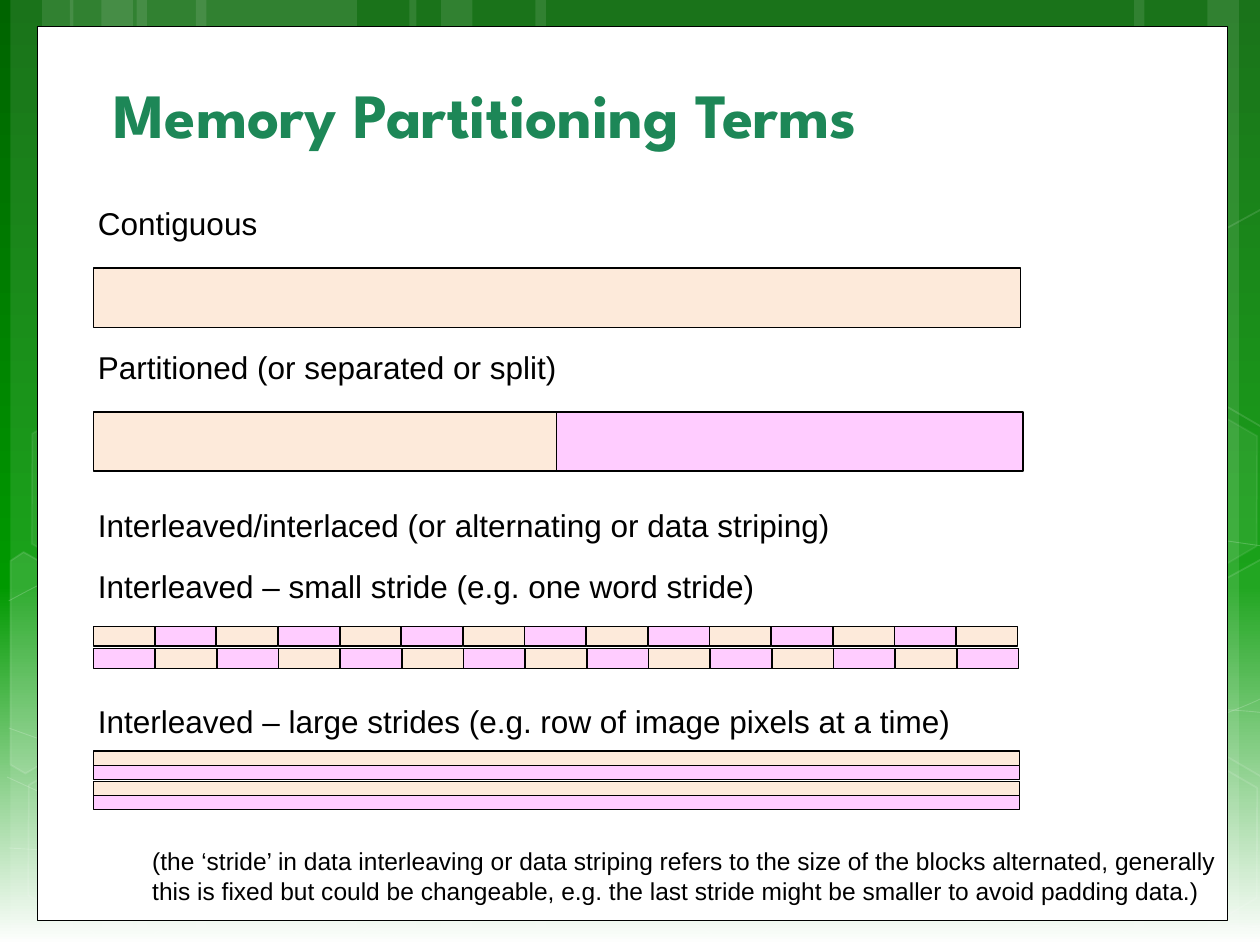
"""Build a slide of memory partitioning terms with bars that show each layout."""
from copy import deepcopy
from dataclasses import dataclass
from typing import Optional

from lxml import etree
from pptx import Presentation
from pptx import util as u
from pptx.dml import color
from pptx.enum import shapes, text
from pptx.oxml import ns

COLORS = {
    "white": "FFFFFF", "black": "000000", "title": "1D8757",
    "peach": "FDEADA", "pink": "FFCCFF",
    "dark_green": "006400", "green": "009900",
}
PAIR = ("peach", "pink")
LEFT, LABEL_LEFT = 53.3, 48.9
CELLS, PITCH = 15, 35.23


@dataclass
class Box:
    left: float
    top: float
    width: float
    height: float


@dataclass
class Style:
    fill: Optional[str] = None
    fill_alpha: int = 100
    line: Optional[str] = None
    line_width: float = 0.75
    line_alpha: int = 100


@dataclass
class Label:
    box: Box
    lines: tuple
    size: float = 18
    font: str = "Arial"
    color: str = "black"
    bold: bool = False
    anchor: text.MSO_ANCHOR = text.MSO_ANCHOR.TOP
    wrap: bool = False


@dataclass
class Hexagon:
    left: float
    top: float
    fill_alpha: int
    line_alpha: int


@dataclass
class Outline:
    points: tuple
    fill_alpha: int
    dy: float = 0


def rgb(name: str) -> color.RGBColor:
    """Return the named colour."""
    return color.RGBColor.from_string(COLORS[name])


def paint(fill, name: Optional[str], alpha: int) -> None:
    """Fill with a colour at an opacity in percent, or with nothing."""
    if name is None or alpha == 0:
        fill.background()
        return
    fill.solid()
    fill.fore_color.rgb = rgb(name)
    if alpha < 100:
        clr = fill._xPr.find(".//" + ns.qn("a:srgbClr"))
        etree.SubElement(clr, ns.qn("a:alpha"), val=str(alpha * 1000))


def apply_style(sp, style: Style) -> None:
    """Set the fill and line of a shape and remove its shadow."""
    sp.shadow.inherit = False
    paint(sp.fill, style.fill, style.fill_alpha)
    paint(sp.line.fill, style.line, style.line_alpha)
    if style.line:
        sp.line.width = u.Pt(style.line_width)


def add_preset(slide, kind, box: Box, style: Style):
    """Add a styled preset shape."""
    sp = slide.shapes.add_shape(kind, u.Pt(box.left), u.Pt(box.top),
                                u.Pt(box.width), u.Pt(box.height))
    apply_style(sp, style)
    return sp


def add_bar(slide, box: Box, fill: str, line: Optional[str] = "black",
            alpha: int = 100, line_width: float = 0.75) -> None:
    """Add a rectangle."""
    add_preset(slide, shapes.MSO_SHAPE.RECTANGLE, box,
               Style(fill, alpha, line, line_width))


def add_path(slide, points, style: Style, close: bool):
    """Add a freeform through the given points."""
    pts = [(u.Pt(x), u.Pt(y)) for x, y in points]
    fb = slide.shapes.build_freeform(*pts[0], scale=1.0)
    fb.add_line_segments(pts[1:], close=close)
    sp = fb.convert_to_shape()
    apply_style(sp, style)
    return sp


def add_curve(slide, knots, style: Style) -> None:
    """Add an open chain of cubic Bezier segments."""
    sp = add_path(slide, knots, style, False)
    lines = list(sp._element.iter(ns.qn("a:lnTo")))
    for i in range(0, len(lines), 3):
        curve = etree.Element(ns.qn("a:cubicBezTo"))
        lines[i].addprevious(curve)
        for line in lines[i:i + 3]:
            curve.append(line[0])
            line.getparent().remove(line)


def add_label(slide, label: Label) -> None:
    """Add a text box with one paragraph per line."""
    b = label.box
    tb = slide.shapes.add_textbox(u.Pt(b.left), u.Pt(b.top), u.Pt(b.width), u.Pt(b.height))
    tf = tb.text_frame
    tf.word_wrap = label.wrap
    tf.auto_size = text.MSO_AUTO_SIZE.NONE if label.wrap else text.MSO_AUTO_SIZE.SHAPE_TO_FIT_TEXT
    tf.vertical_anchor = label.anchor
    tf.text = "\n".join(label.lines)
    for p in tf.paragraphs:
        p.font.name, p.font.size, p.font.bold = label.font, u.Pt(label.size), label.bold
        p.font.color.rgb = rgb(label.color)


def set_background(slide) -> None:
    """Give the slide a vertical green to white gradient."""
    fill = slide.background.fill
    fill.gradient()
    fill.gradient_angle = 270
    stops = slide._element.find(".//" + ns.qn("a:gsLst"))
    stops.append(deepcopy(stops[-1]))
    for stop, (pos, name) in zip(fill.gradient_stops,
                                 ((0, "dark_green"), (0.62, "green"), (1, "white"))):
        stop.position = pos
        stop.color.rgb = rgb(name)


BANDS = ((78, 126), (6, 36), (24, 60), (112, 126), (40, 36), (58, 60),
         (528, 126), (690, 36), (648, 60), (306, 222), (234, 36), (252, 60))
CURVES = (
    ((5, 484.6), (44, 487), (83, 489), (137, 488), (191, 487), (258, 486), (330, 479),
     (402, 472), (504, 458), (570, 444), (636, 430), (703.5, 409), (725, 397)),
    ((5, 343.4), (26, 332), (47, 321), (87, 310), (128, 300), (186, 283), (250, 279),
     (314, 274), (392, 273), (471, 279), (550, 284), (682, 307), (725, 312.5)),
    ((4, 444), (91, 484), (178, 523), (240.5, 539)),
    ((5, 416), (27, 424), (50, 432), (92, 443.5), (134, 454), (197, 472), (257, 484.6),
     (317, 497), (392, 510), (452, 517), (512, 525), (576, 528), (614, 530),
     (652, 533), (662, 531), (680, 531), (699, 531), (713, 530), (725, 528.5)),
    ((174, 539), (187, 525), (200, 510), (217, 497.5), (235, 485), (259, 470), (279, 460),
     (300, 450), (312, 446), (338, 438.5), (364, 431), (413, 421), (438, 416),
     (464, 411), (467, 411), (490, 410), (512, 407), (547, 405), (572, 405),
     (597, 404), (638, 405), (638, 405), (654, 405), (670, 405), (686, 405),
     (699, 405.4), (711, 406), (724, 407.5)),
)
HEXAGONS = (Hexagon(357.8, 424, 6, 12), Hexagon(8, 425.5, 0, 12), Hexagon(10, 224.6, 7, 8),
            Hexagon(125.3, 426.2, 0, 12), Hexagon(600.5, 427, 0, 12), Hexagon(600.5, 226, 7, 8))
LEFT_EDGE = ((6, 320.5), (13.5, 315.5), (69, 347), (68.5, 410.5), (14.5, 442), (6, 437))
RIGHT_EDGE = ((667, 349), (721, 319.5), (726.5, 321), (726, 441), (721, 444), (667, 412.5))
OUTLINES = (Outline(LEFT_EDGE, 10), Outline(RIGHT_EDGE, 4), Outline(RIGHT_EDGE, 0, -200))
LABELS = (
    Label(Box(57.6, 35.3, 606, 54.7), ("Memory Partitioning Terms",), 36, "League Spartan",
          "title", True, text.MSO_ANCHOR.BOTTOM, True),
    Label(Box(LABEL_LEFT, 113, 106.5, 29), ("Contiguous",)),
    Label(Box(LABEL_LEFT, 195.1, 279.4, 29), ("Partitioned (or separated or split)",)),
    Label(Box(LABEL_LEFT, 285.8, 436.3, 29),
          ("Interleaved/interlaced (or alternating or data striping)",)),
    Label(Box(LABEL_LEFT, 397.4, 511.2, 29),
          ("Interleaved – large strides (e.g. row of image pixels at a time)",)),
    Label(Box(LABEL_LEFT, 320.4, 393, 29), ("Interleaved – small stride (e.g. one word stride)",)),
    Label(Box(79.9, 480.2, 625, 41),
          ("(the ‘stride’ in data interleaving or data striping refers to the size of the "
           "blocks alternated, generally",
           "this is fixed but could be changeable, e.g. the last stride might be smaller to "
           "avoid padding data.)"), 14),
)


def draw_backdrop(slide) -> None:
    """Draw the bands, curves and hexagons around the white panel."""
    for left, width in BANDS:
        add_bar(slide, Box(left, 0, width, 540), "white", None, 10)
    for knots in CURVES:
        add_curve(slide, knots, Style(None, 100, "white", 0.5, 20))
    for h in HEXAGONS:
        sp = add_preset(slide, shapes.MSO_SHAPE.HEXAGON, Box(h.left, h.top, 126, 109.4),
                        Style("white", h.fill_alpha, "white", 1, h.line_alpha))
        sp.adjustments[0] = 0.285
        sp.rotation = 30
    for o in OUTLINES:
        add_path(slide, [(x, y + o.dy) for x, y in o.points],
                 Style("white", o.fill_alpha, "white", 1, 12), True)
    add_bar(slide, Box(21.6, 15.1, 679.7, 510.8), "white", line_width=0.5)


def draw_memory(slide) -> None:
    """Draw the memory bars."""
    add_bar(slide, Box(LEFT, 153.2, 530, 33.8), "peach")
    for left, fill in zip((LEFT, 317.9), PAIR):
        add_bar(slide, Box(left, 235.4, 266.7, 33.8), fill)
    for row, top in enumerate((357.9, 370.6)):
        for i in range(CELLS):
            add_bar(slide, Box(LEFT + row * 0.3 + i * PITCH, top, 35, 11.3), PAIR[(row + i) % 2])
    for i, top in enumerate((429.2, 437.3, 446.6, 454.7)):
        add_bar(slide, Box(LEFT, top, 529.3, 8.1), PAIR[i % 2])


def main() -> None:
    """Build and save the slide."""
    prs = Presentation()
    prs.slide_width, prs.slide_height = u.Pt(720), u.Pt(540)
    slide = prs.slides.add_slide(prs.slide_layouts[6])
    set_background(slide)
    draw_backdrop(slide)
    draw_memory(slide)
    for label in LABELS:
        add_label(slide, label)
    prs.save("out.pptx")


if __name__ == "__main__":
    main()
